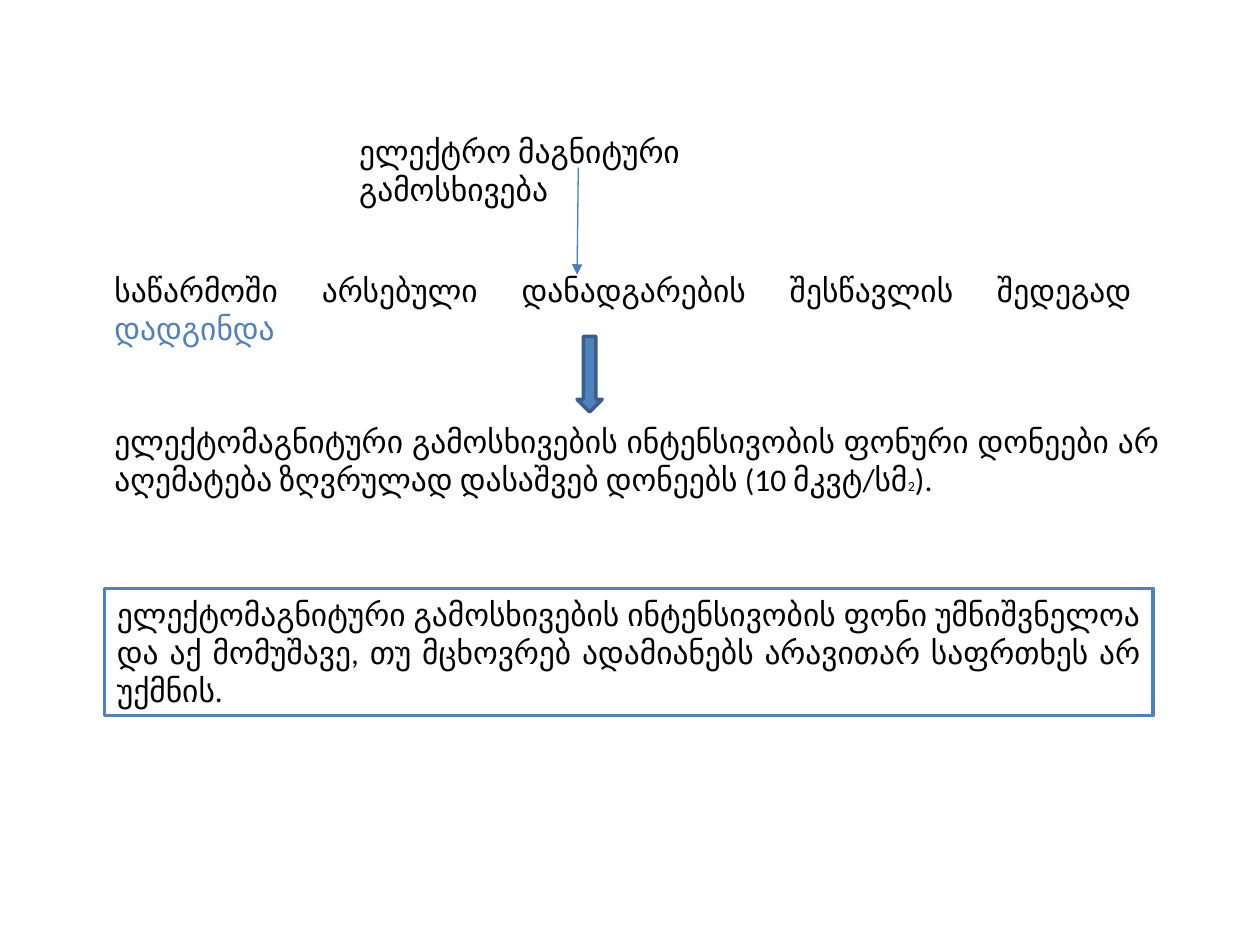
from dataclasses import dataclass

from lxml.etree import SubElement
from pptx import Presentation
from pptx.dml.color import RGBColor
from pptx.enum.shapes import MSO_CONNECTOR, MSO_SHAPE
from pptx.enum.text import MSO_ANCHOR, MSO_AUTO_SIZE, PP_ALIGN
from pptx.oxml.ns import qn
from pptx.util import Inches, Pt


@dataclass(frozen=True)
class Theme:
    font: str = "Calibri"
    body: float = 18
    small: float = 8
    thin: float = 0.75
    thick: float = 2
    text: RGBColor = RGBColor(0, 0, 0)
    paper: RGBColor = RGBColor(255, 255, 255)
    accent: RGBColor = RGBColor(0x4F, 0x81, 0xBD)
    edge: RGBColor = RGBColor(0x3A, 0x5F, 0x8C)
    arrow: RGBColor = RGBColor(0x4B, 0x7E, 0xBC)


THEME = Theme()
LEFT = 0.81


def inches(*lengths):
    return [Inches(length) for length in lengths]


def write(shape, spans, align=PP_ALIGN.JUSTIFY, anchor=MSO_ANCHOR.TOP):
    """Fill a shape with one paragraph of (text, size, colour) runs."""
    frame = shape.text_frame
    frame.word_wrap = True
    frame.auto_size = MSO_AUTO_SIZE.SHAPE_TO_FIT_TEXT
    frame.vertical_anchor = anchor
    para = frame.paragraphs[0]
    para.alignment = align
    for text, size, colour in spans:
        span = para.add_run()
        span.text = text
        span.font.name = THEME.font
        span.font.size = Pt(size)
        span.font.color.rgb = colour


def add_heading(page, box, text):
    title = page.shapes.title
    title.left, title.top, title.width, title.height = inches(*box)
    write(title, [(text, THEME.body, THEME.text)], PP_ALIGN.LEFT)


def add_statement(page, box, spans):
    write(page.shapes.add_textbox(*inches(*box)), spans)


def add_thin_arrow(page, start, end):
    line = page.shapes.add_connector(MSO_CONNECTOR.STRAIGHT, *inches(*start, *end))
    line.line.color.rgb = THEME.arrow
    line.line.width = Pt(THEME.thin)
    SubElement(line.line._get_or_add_ln(), qn("a:tailEnd"), type="triangle")
    SubElement(line._element.spPr, qn("a:effectLst"))


def add_outlined(page, kind, box, fill, edge):
    shape = page.shapes.add_shape(kind, *inches(*box))
    shape.shadow.inherit = False
    shape.fill.solid()
    shape.fill.fore_color.rgb = fill
    shape.line.color.rgb = edge
    shape.line.width = Pt(THEME.thick)
    return shape


def add_conclusion(page, box, text):
    frame = add_outlined(page, MSO_SHAPE.RECTANGLE, box, THEME.paper, THEME.accent)
    write(frame, [(text, THEME.body, THEME.text)], anchor=MSO_ANCHOR.MIDDLE)


def build_radiation_page(deck):
    page = deck.slides.add_slide(deck.slide_layouts[5])
    add_heading(page, (2.75, 1, 4.21, 0.4), "ელექტრო მაგნიტური გამოსხივება")
    add_statement(page, (LEFT, 2.1, 8.27, 0.4), [
        ("საწარმოში არსებული დანადგარების შესწავლის შედეგად ", THEME.body, THEME.text),
        ("დადგინდა", THEME.body, THEME.accent),
    ])
    add_thin_arrow(page, (4.59, 1.33), (4.58, 2.18))
    add_statement(page, (LEFT, 3.3, 8.49, 0.71), [
        ("ელექტომაგნიტური გამოსხივების ინტენსივობის ფონური დონეები არ "
         "აღემატება ზღვრულად დასაშვებ დონეებს (10 მკვტ/სმ", THEME.body, THEME.text),
        ("2", THEME.small, THEME.text),
        (").", THEME.body, THEME.text),
    ])
    add_outlined(page, MSO_SHAPE.DOWN_ARROW, (4.58, 2.67, 0.2, 0.6),
                 THEME.accent, THEME.edge)
    add_conclusion(page, (0.83, 4.67, 8.32, 1.01),
                   "ელექტომაგნიტური გამოსხივების ინტენსივობის ფონი უმნიშვნელოა და აქ "
                   "მომუშავე, თუ მცხოვრებ ადამიანებს არავითარ საფრთხეს არ უქმნის.")


def main():
    deck = Presentation()
    deck.slide_width, deck.slide_height = inches(10, 7.5)
    build_radiation_page(deck)
    deck.save("out.pptx")


if __name__ == "__main__":
    main()
